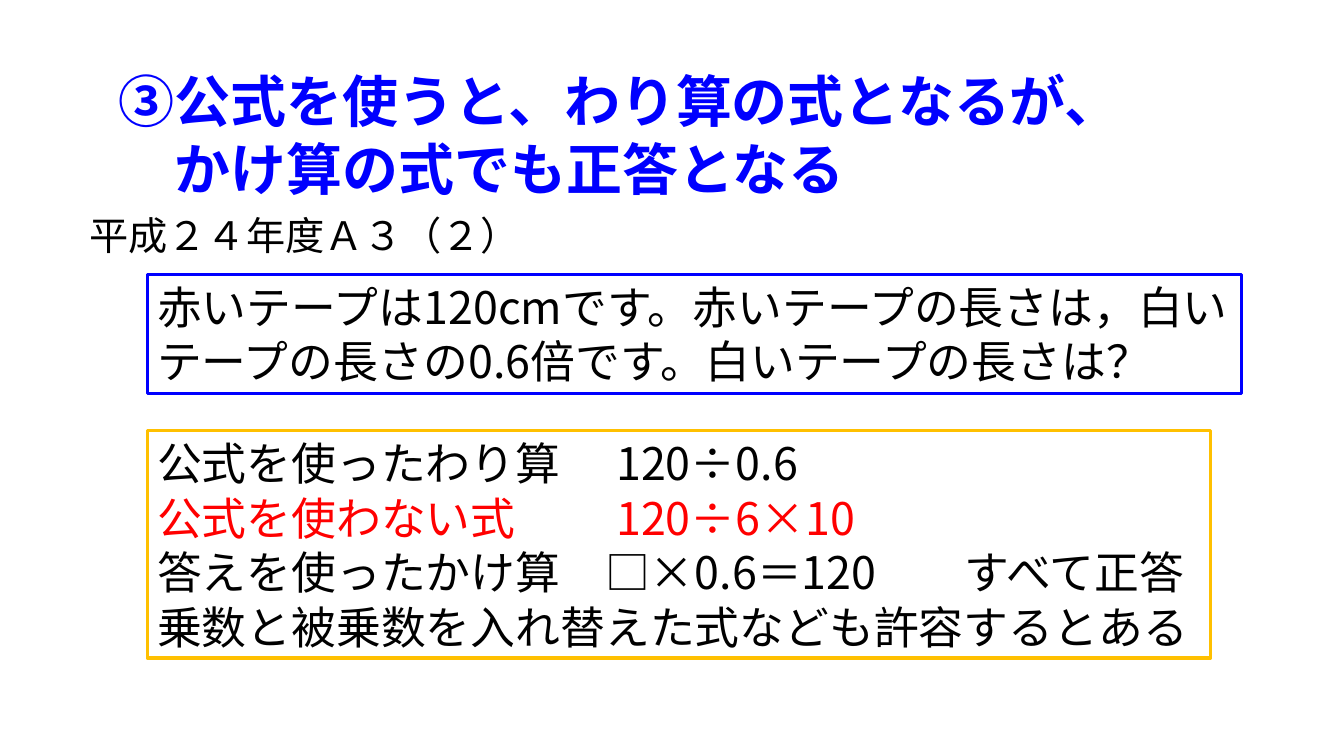
"""Build a slide on division and multiplication answers to a tape problem."""
from lxml import etree
from pptx import Presentation, util as u
from pptx.dml.color import RGBColor
from pptx.enum import shapes, text
from pptx.oxml.ns import qn

THEME = {
    "blue": "0000FF", "gold": "FFC000", "red": "FF0000", "black": "000000",
    "serif": "TeX Gyre Schola", "sans": "Noto Sans CJK JP",
    "title": 40, "source": 28, "body": 32, "edge": 2.25, "lead": 1.215,
}

TITLE = [
    {"text": "③公式を使うと、わり算の式となるが、"},
    {"text": "かけ算の式でも正答となる", "indent": THEME["title"]},
]
SOURCE = [{"text": "平成２４年度Ａ３（２）"}]
PROBLEM = [{"text": "赤いテープは120cmです。赤いテープの長さは，白いテープの長さの0.6倍です。白いテープの長さは？"}]
ANSWERS = [
    {"text": "公式を使ったわり算\t120÷0.6", "tabs": [328]},
    {"text": "公式を使わない式\t120÷6×10", "tabs": [328], "color": "red"},
    {"text": "答えを使ったかけ算\t□×0.6＝120\tすべて正答", "tabs": [320, 577]},
    {"text": "乗数と被乗数を入れ替えた式なども許容するとある"},
]

BLOCKS = [
    {"at": (77.8, 43.2, 741.6, 104.4), "lines": TITLE, "size": "title",
     "font": "serif", "color": "blue", "bold": True, "wrap": False},
    {"at": (56.9, 146.9, 329, 41), "lines": SOURCE, "size": "source", "font": "serif"},
    {"at": (105.1, 195.8, 781.9, 85), "lines": PROBLEM, "size": "body",
     "font": "sans", "edge": "blue"},
    {"at": (105.1, 307.4, 759.6, 162.7), "lines": ANSWERS, "size": "body",
     "font": "sans", "edge": "gold"},
]


def tint(name):
    return RGBColor.from_string(THEME[name])


def write(para, line, block):
    size = THEME[block["size"]]
    face = THEME[block["font"]]
    para.text = line["text"]
    para.alignment = text.PP_ALIGN.LEFT
    para.line_spacing = u.Pt(round(size * THEME["lead"], 1))
    props = para._p.get_or_add_pPr()
    if "indent" in line:
        props.set("marL", str(u.Pt(line["indent"])))
    if "tabs" in line:
        stops = etree.SubElement(props, qn("a:tabLst"))
        for stop in line["tabs"]:
            etree.SubElement(stops, qn("a:tab"), pos=str(u.Pt(stop)), algn="l")
    font = para.font
    font.size = u.Pt(size)
    font.bold = block.get("bold", False)
    font.color.rgb = tint(line.get("color", block.get("color", "black")))
    font.name = face
    etree.SubElement(props.find(qn("a:defRPr")), qn("a:ea"), typeface=face)


def place(slide, block):
    area = [u.Pt(n) for n in block["at"]]
    if "edge" in block:
        box = slide.shapes.add_shape(shapes.MSO_SHAPE.RECTANGLE, *area)
        box.shadow.inherit = False
        box.fill.background()
        box.line.color.rgb = tint(block["edge"])
        box.line.width = u.Pt(THEME["edge"])
    else:
        box = slide.shapes.add_textbox(*area)
    frame = box.text_frame
    frame.word_wrap = block.get("wrap", True)
    frame.auto_size = text.MSO_AUTO_SIZE.SHAPE_TO_FIT_TEXT
    frame.vertical_anchor = text.MSO_ANCHOR.TOP
    for i, line in enumerate(block["lines"]):
        para = frame.add_paragraph() if i else frame.paragraphs[0]
        write(para, line, block)


def main():
    deck = Presentation()
    deck.slide_width, deck.slide_height = u.Pt(960), u.Pt(540)
    slide = deck.slides.add_slide(deck.slide_layouts[6])
    for block in BLOCKS:
        place(slide, block)
    deck.save("out.pptx")


if __name__ == "__main__":
    main()
